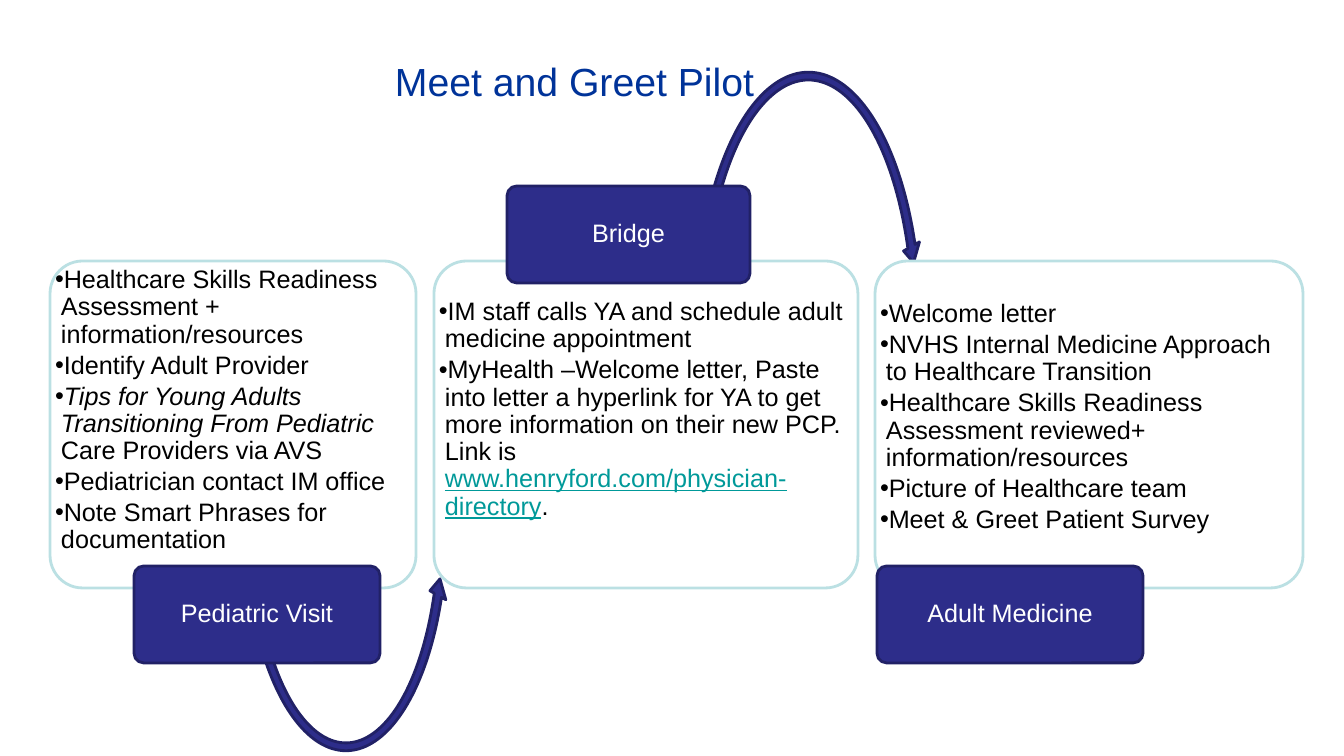
from lxml import etree
from pptx import Presentation
from pptx.dml.color import RGBColor
from pptx.enum.shapes import MSO_SHAPE
from pptx.enum.text import MSO_ANCHOR, PP_ALIGN
from pptx.oxml.ns import qn
from pptx.util import Emu, Pt

ROUNDED = MSO_SHAPE.ROUNDED_RECTANGLE
ARROW_OVER = MSO_SHAPE.CIRCULAR_ARROW
ARROW_UNDER = MSO_SHAPE.LEFT_CIRCULAR_ARROW
TOP, MIDDLE = MSO_ANCHOR.TOP, MSO_ANCHOR.MIDDLE
LEFT, CENTER = PP_ALIGN.LEFT, PP_ALIGN.CENTER

EMU_PER_PX = 914400 / 100.8
FONT = "Arial"
COLORS = {
    "title": "003399",
    "text": "000000",
    "link": "009999",
    "white": "FFFFFF",
    "card_line": "BBE0E3",
    "navy": "2D2D8A",
    "navy_line": "212166",
}
CARD_TOP, CARD_HEIGHT = 261, 327
LABEL_HEIGHT = 97

PEDIATRIC = [
    ["Healthcare Skills Readiness Assessment + information/resources"],
    ["Identify Adult Provider"],
    [("Tips for Young Adults Transitioning From Pediatric ", {"italic": True}),
     "Care Providers via AVS"],
    ["Pediatrician contact IM office"],
    ["Note Smart Phrases for documentation"],
]
BRIDGE = [
    ["IM staff calls YA and schedule adult medicine appointment"],
    ["MyHealth –Welcome letter, Paste into letter a hyperlink for YA to get "
     "more information on their new PCP. Link is ",
     ("www.henryford.com/physician-directory", {"color": "link", "underline": True}),
     "."],
]
ADULT = [
    ["Welcome letter"],
    ["NVHS Internal Medicine Approach to Healthcare Transition"],
    ["Healthcare Skills Readiness Assessment reviewed+ information/resources"],
    ["Picture of Healthcare team"],
    ["Meet & Greet Patient Survey"],
]


def px(length):
    """Turn a length in px into EMU."""
    return Emu(round(length * EMU_PER_PX))


def rgb(name):
    """Return the named colour."""
    return RGBColor.from_string(COLORS[name])


def add_bullet(para):
    """Give a paragraph a hanging round bullet."""
    properties = para._p.get_or_add_pPr()
    properties.set("marL", str(px(6)))
    properties.set("indent", str(px(-6)))
    etree.SubElement(properties, qn("a:buFont")).set("typeface", FONT)
    etree.SubElement(properties, qn("a:buChar")).set("char", "•")


def write(shape, paras, size=18, color="text", align=LEFT, anchor=TOP,
          insets=(5, 5, 5, 5), spacing=0.9, after=0, bullets=False):
    """Fill a shape with paragraphs made of plain or formatted spans."""
    frame = shape.text_frame
    frame.word_wrap = True
    frame.vertical_anchor = anchor
    (frame.margin_left, frame.margin_top,
     frame.margin_right, frame.margin_bottom) = map(px, insets)
    for index, spans in enumerate(paras):
        para = frame.add_paragraph() if index else frame.paragraphs[0]
        if bullets:
            add_bullet(para)
        para.alignment = align
        para.line_spacing = spacing
        para.space_before = Pt(0)
        para.space_after = Pt(after)
        for span in spans:
            text, style = (span, {}) if isinstance(span, str) else span
            run = para.add_run()
            run.text = text
            run.font.name = FONT
            run.font.size = Pt(size)
            run.font.color.rgb = rgb(style.get("color", color))
            run.font.italic = style.get("italic", False)
            run.font.underline = style.get("underline", False)


def add_figure(page, kind, box, adjustments, fill="navy", line="navy_line"):
    """Draw a filled and outlined preset shape in the box."""
    shape = page.shapes.add_shape(kind, *map(px, box))
    for index, value in enumerate(adjustments):
        shape.adjustments[index] = value
    shape.shadow.inherit = False
    shape.fill.solid()
    shape.fill.fore_color.rgb = rgb(fill)
    shape.line.color.rgb = rgb(line)
    shape.line.width = Pt(2)
    return shape


def add_title(page, text, box):
    """Place and format the title."""
    title = page.shapes.title
    title.left, title.top, title.width, title.height = map(px, box)
    write(title, [[text]], size=28, color="title", align=CENTER,
          anchor=MIDDLE, spacing=1)


def add_card(page, left, width, items, text_top):
    """Draw a rounded card with its bulleted list."""
    box = (left, CARD_TOP, width, CARD_HEIGHT)
    add_figure(page, ROUNDED, box, [0.1], fill="white", line="card_line")
    body = page.shapes.add_textbox(*map(px, box))
    write(body, items, insets=(5, text_top, 5, 5), after=2.7, bullets=True)


def add_label(page, text, left, top, width):
    """Draw the navy label of a stage."""
    label = add_figure(page, ROUNDED, (left, top, width, LABEL_HEIGHT), [0.1])
    write(label, [[text]], color="white", align=CENTER, anchor=MIDDLE)


def build_slide(page):
    """Lay out the three stages and the arrows that join them."""
    add_title(page, "Meet and Greet Pilot", (0, 8, 1149, 146))
    add_card(page, 50, 366, PEDIATRIC, text_top=6)
    add_figure(page, ARROW_UNDER, (240, 295, 212, 461),
               [0.037, 4.574, 22.329, 90.245, 0.043])
    add_label(page, "Pediatric Visit", 134, 566, 246)
    add_card(page, 434, 424, BRIDGE, text_top=38)
    add_figure(page, ARROW_OVER, (691, 67, 235, 511),
               [0.033, 4.086, 194.159, 125.755, 0.039])
    add_label(page, "Bridge", 507, 186, 243)
    add_card(page, 875, 428, ADULT, text_top=40)
    add_label(page, "Adult Medicine", 877, 566, 266)


def main():
    """Build and save the deck."""
    deck = Presentation()
    deck.slide_width, deck.slide_height = px(1344), px(756)
    build_slide(deck.slides.add_slide(deck.slide_layouts[5]))
    deck.save("out.pptx")


if __name__ == "__main__":
    main()
